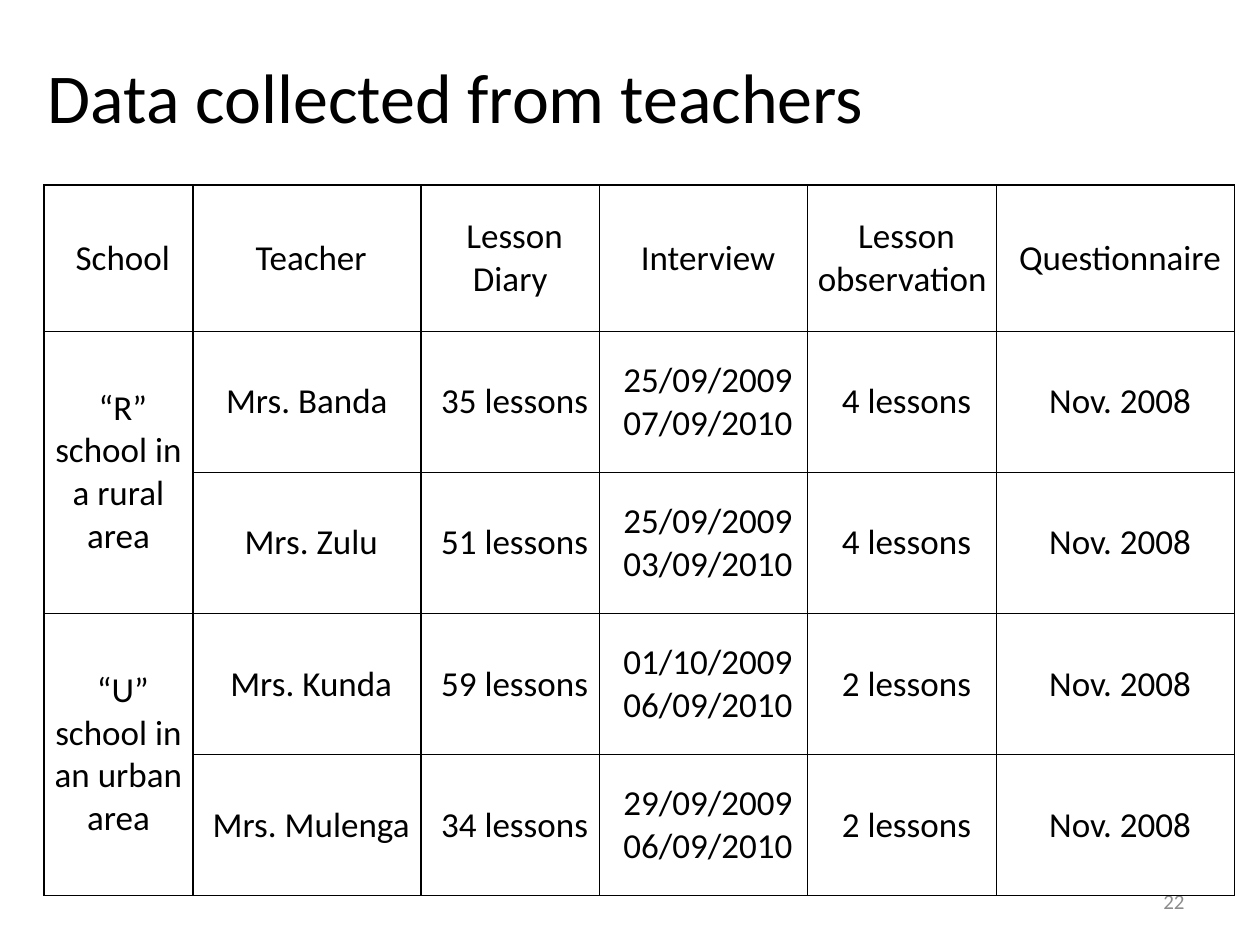
from dataclasses import dataclass

from lxml import etree
from pptx import Presentation
from pptx.dml.color import RGBColor
from pptx.enum.text import MSO_ANCHOR, PP_ALIGN
from pptx.oxml.ns import qn
from pptx.util import Inches, Pt

LEFT, CENTER, RIGHT = PP_ALIGN.LEFT, PP_ALIGN.CENTER, PP_ALIGN.RIGHT
MIDDLE = MSO_ANCHOR.MIDDLE


@dataclass(frozen=True)
class Theme:
    font: str = "Calibri"
    ink: str = "000000"
    gray: str = "8C8C8C"
    title: int = 40
    body: int = 20
    small: int = 12
    rule: int = 1


@dataclass(frozen=True)
class Label:
    text: str
    box: tuple[float, float, float, float]
    size: int
    color: str
    align: PP_ALIGN
    left: float = 0
    first: float = 0


@dataclass(frozen=True)
class Teacher:
    name: str
    diary: str
    talks: str
    visits: str
    survey: str = "Nov. 2008"
    first: float = 0.07


@dataclass(frozen=True)
class School:
    name: str
    staff: tuple[Teacher, ...]


THEME = Theme()
INDENT = 0.07
MARGIN = Inches(0.07)
WIDTHS = (1.18, 1.81, 1.42, 1.65, 1.5, 1.89)
HEAD_H, ROW_H = 1.16, 1.12

LABELS = (
    Label("Data collected from teachers", (0.28, 0.14, 9.41, 1.24),
          THEME.title, THEME.ink, LEFT, 1.37, -1.37),
    Label("22", (7.17, 6.95, 2.33, 0.4), THEME.small, THEME.gray, RIGHT),
)
HEADS = ("School", "Teacher", "Lesson Diary", "Interview",
         "Lesson observation", "Questionnaire")
SCHOOLS = (
    School("“R” school in a rural area", (
        Teacher("Mrs. Banda", "35 lessons", "25/09/2009\n07/09/2010",
                "4 lessons", first=0),
        Teacher("Mrs. Zulu", "51 lessons", "25/09/2009\n03/09/2010",
                "4 lessons"),
    )),
    School("“U” school in an urban area", (
        Teacher("Mrs. Kunda", "59 lessons", "01/10/2009\n06/09/2010",
                "2 lessons"),
        Teacher("Mrs. Mulenga", "34 lessons", "29/09/2009\n06/09/2010",
                "2 lessons"),
    )),
)


def style(frame, size: int, color: str, align: PP_ALIGN,
          left: float = 0, first: float = 0) -> None:
    for para in frame.paragraphs:
        para.alignment = align
        props = para._p.get_or_add_pPr()
        props.set("marL", str(Inches(left)))
        props.set("indent", str(Inches(first)))
        for run in para.runs:
            run.font.name = THEME.font
            run.font.size = Pt(size)
            run.font.color.rgb = RGBColor.from_string(color)


def add_label(slide, label: Label) -> None:
    shape = slide.shapes.add_textbox(*map(Inches, label.box))
    frame = shape.text_frame
    frame.word_wrap = True
    frame.vertical_anchor = MIDDLE
    frame.text = label.text
    style(frame, label.size, label.color, label.align,
          label.left, label.first)


def add_rules(cell) -> None:
    props = cell._tc.get_or_add_tcPr()
    # Borders come before the fill in the cell properties
    for spot, side in enumerate(("a:lnL", "a:lnR", "a:lnT", "a:lnB")):
        line = etree.Element(qn(side), w=str(Pt(THEME.rule)))
        fill = etree.SubElement(line, qn("a:solidFill"))
        etree.SubElement(fill, qn("a:srgbClr"), val=THEME.ink)
        props.insert(spot, line)


def fill_cell(cell, text: str, first: float = INDENT) -> None:
    cell.text_frame.text = text
    cell.vertical_anchor = MIDDLE
    cell.margin_left = cell.margin_right = MARGIN
    cell.margin_top = cell.margin_bottom = 0
    style(cell.text_frame, THEME.body, THEME.ink, CENTER, first=first)


def add_grid(slide) -> None:
    count = 1 + sum(len(school.staff) for school in SCHOOLS)
    tall = HEAD_H + ROW_H * (count - 1)
    table = slide.shapes.add_table(
        count, len(WIDTHS), Inches(0.35), Inches(1.47),
        Inches(sum(WIDTHS)), Inches(tall)).table
    table.first_row = table.horz_banding = False
    for col, width in zip(table.columns, WIDTHS):
        col.width = Inches(width)
    for num, row in enumerate(table.rows):
        row.height = Inches(ROW_H if num else HEAD_H)
    for cell in table.iter_cells():
        cell.fill.background()
        add_rules(cell)

    # Header row
    for col, text in enumerate(HEADS):
        fill_cell(table.cell(0, col), text)

    # One merged cell per school, one row per teacher
    row = 1
    for school in SCHOOLS:
        top = table.cell(row, 0)
        top.merge(table.cell(row + len(school.staff) - 1, 0))
        fill_cell(top, school.name)
        for one in school.staff:
            fill_cell(table.cell(row, 1), one.name, one.first)
            facts = (one.diary, one.talks, one.visits, one.survey)
            for col, text in enumerate(facts, 2):
                fill_cell(table.cell(row, col), text)
            row += 1


def main() -> None:
    deck = Presentation()
    deck.slide_width, deck.slide_height = Inches(10), Inches(7.5)
    slide = deck.slides.add_slide(deck.slide_layouts[6])
    for label in LABELS:
        add_label(slide, label)
    add_grid(slide)
    deck.save("out.pptx")


if __name__ == "__main__":
    main()
